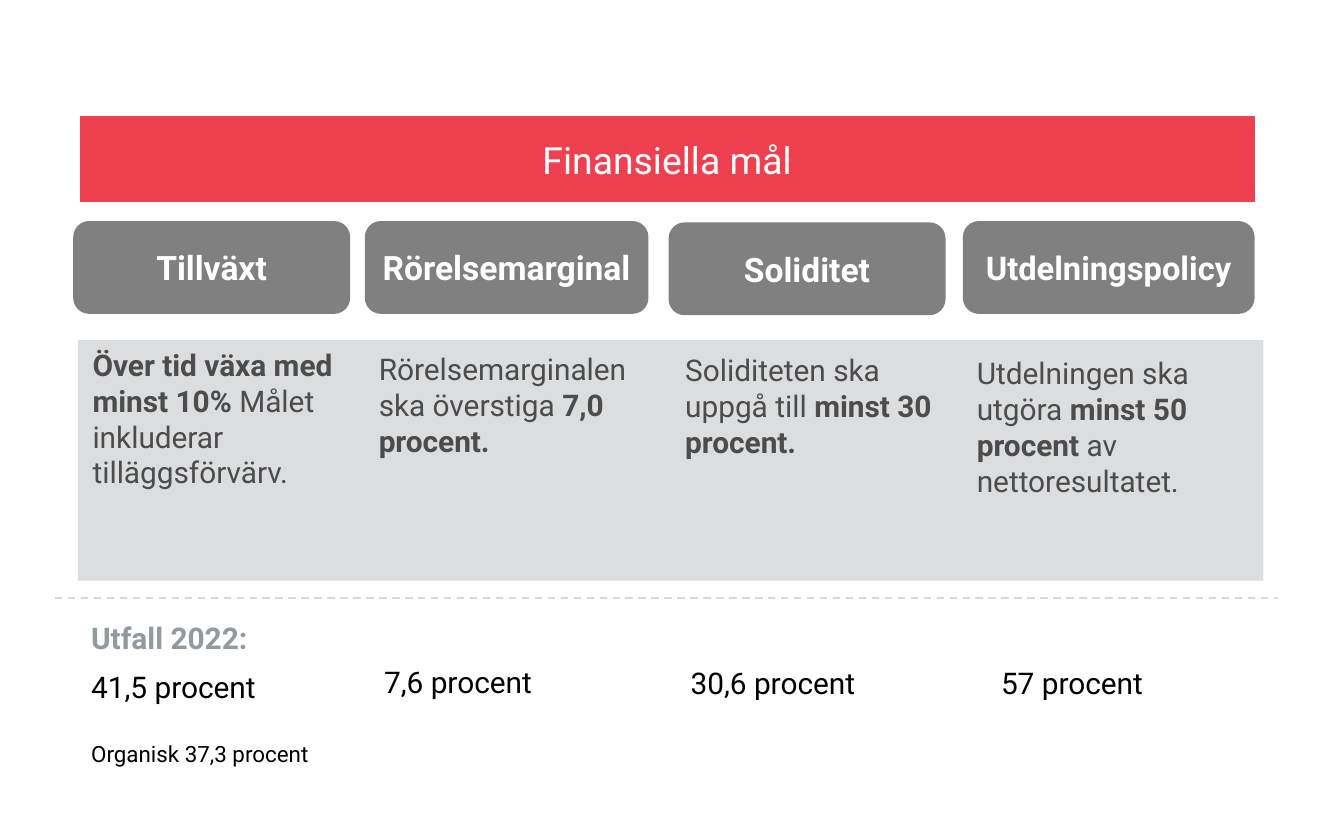
from lxml.etree import SubElement
from pptx import Presentation
from pptx.dml.color import RGBColor
from pptx.enum.dml import MSO_LINE
from pptx.enum.shapes import MSO_CONNECTOR, MSO_SHAPE
from pptx.enum.text import MSO_ANCHOR, MSO_AUTO_SIZE, PP_ALIGN
from pptx.oxml import parse_xml
from pptx.oxml.ns import nsdecls, qn
from pptx.util import Inches, Pt

FONT = "Roboto"
COLORS = {"red": "EF4050", "gray": "808080", "panel": "DBDDDF", "dash": "D9D9D9",
          "body": "4C4C4C", "label": "939A9E", "white": "FFFFFF", "black": "000000"}
TITLE = "Finansiella mål"
RESULT_LABEL = "Utfall 2022:"
ORGANIC = "Organisk 37,3 procent"

# Goal text is a list of (text, bold) runs; tops and lefts are in inches.
GOALS = [
    {"name": "Tillväxt", "size": 18, "left": 0.55, "width": 2.05, "head_top": 1.65,
     "text": [("Över tid växa med minst 10% ", True),
              ("Målet inkluderar tilläggsförvärv.", False)],
     "text_at": (0.59, 2.53), "result": "41,5 procent", "result_at": (0.58, 4.93)},
    {"name": "Rörelsemarginal", "size": 18, "left": 2.72, "width": 2.1, "head_top": 1.65,
     "text": [("Rörelsemarginalen ska överstiga ", False), ("7,0 procent.", True)],
     "text_at": (2.72, 2.56), "result": "7,6 procent", "result_at": (2.76, 4.89)},
    {"name": "Soliditet", "size": 18, "left": 4.98, "width": 2.05, "head_top": 1.66,
     "text": [("Soliditeten ska uppgå till ", False), ("minst 30 procent.", True)],
     "text_at": (5.0, 2.57), "result": "30,6 procent", "result_at": (5.04, 4.9)},
    {"name": "Utdelningspolicy", "size": 17.5, "left": 7.17, "width": 2.16, "head_top": 1.65,
     "text": [("Utdelningen ska utgöra ", False), ("minst 50 procent ", True),
              ("av nettoresultatet.", False)],
     "text_at": (7.17, 2.59), "result": "57 procent", "result_at": (7.35, 4.9)},
]


def rgb(name):
    return RGBColor.from_string(COLORS[name])


def write(p, runs, size, color, align=PP_ALIGN.LEFT):
    p.alignment = align
    p.font.name, p.font.size = FONT, Pt(size)
    p.font.color.rgb = rgb(color)
    for text, bold in runs:
        r = p.add_run()
        r.text = text
        r.font.bold = bold


def paint(sp, fill, line=None):
    sp.fill.solid()
    sp.fill.fore_color.rgb = rgb(fill)
    if line:
        sp.line.color.rgb = rgb(line)
        sp.line.width = Pt(0.75)
    else:
        sp.line.fill.background()


def center_text(sp, text, size, bold):
    tf = sp.text_frame
    tf.word_wrap = True
    tf.auto_size = MSO_AUTO_SIZE.NONE
    tf.vertical_anchor = MSO_ANCHOR.MIDDLE
    tf.margin_left = tf.margin_right = Inches(0.07)
    tf.margin_top = tf.margin_bottom = Inches(0.04)
    write(tf.paragraphs[0], [(text, bold)], size, "white", PP_ALIGN.CENTER)


def add_shape(slide, kind, *box):
    sp = slide.shapes.add_shape(kind, *map(Inches, box))
    sp.shadow.inherit = False
    return sp


def add_text(slide, at, width, height, runs, color):
    tf = slide.shapes.add_textbox(*map(Inches, (*at, width, height))).text_frame
    tf.word_wrap = True
    write(tf.paragraphs[0], runs, 16, color)
    return tf


def add_title(slide):
    sp = slide.shapes.title
    sp.left, sp.top, sp.width, sp.height = map(Inches, (0.59, 0.86, 8.75, 0.65))
    sp._element.spPr.find(qn("a:xfrm")).addnext(parse_xml(
        f'<a:prstGeom {nsdecls("a")} prst="roundRect"><a:avLst/></a:prstGeom>'))
    paint(sp, "red", "white")
    center_text(sp, TITLE, 20, False)


def add_divider(slide):
    line = slide.shapes.add_connector(
        MSO_CONNECTOR.STRAIGHT, *map(Inches, (0.41, 4.45, 9.51, 4.45)))
    line.line.color.rgb = rgb("dash")
    line.line.width = Pt(1)
    line.line.dash_style = MSO_LINE.DASH
    SubElement(line._element.spPr, qn("a:effectLst"))


def main():
    prs = Presentation()
    prs.slide_width, prs.slide_height = Inches(10), Inches(6.25)
    slide = prs.slides.add_slide(prs.slide_layouts[5])
    add_title(slide)
    paint(add_shape(slide, MSO_SHAPE.RECTANGLE, 0.58, 2.53, 8.82, 1.79), "panel")
    add_divider(slide)
    add_text(slide, (0.58, 4.56), 2.1, 0.37, [(RESULT_LABEL, True)], "label")

    results = []
    for goal in GOALS:
        head = add_shape(slide, MSO_SHAPE.ROUNDED_RECTANGLE,
                         goal["left"], goal["head_top"], goal["width"], 0.68)
        paint(head, "gray", "gray")
        center_text(head, goal["name"], goal["size"], True)
        add_text(slide, goal["text_at"], goal["width"], 1.18, goal["text"], "body")
        results.append(add_text(slide, goal["result_at"], goal["width"], 0.37,
                                [(goal["result"], False)], "black"))

    organic = results[0].add_paragraph()
    organic.space_before = Pt(19)
    write(organic, [(ORGANIC, False)], 12, "black")
    results[0].auto_size = MSO_AUTO_SIZE.SHAPE_TO_FIT_TEXT
    prs.save("out.pptx")


if __name__ == "__main__":
    main()
